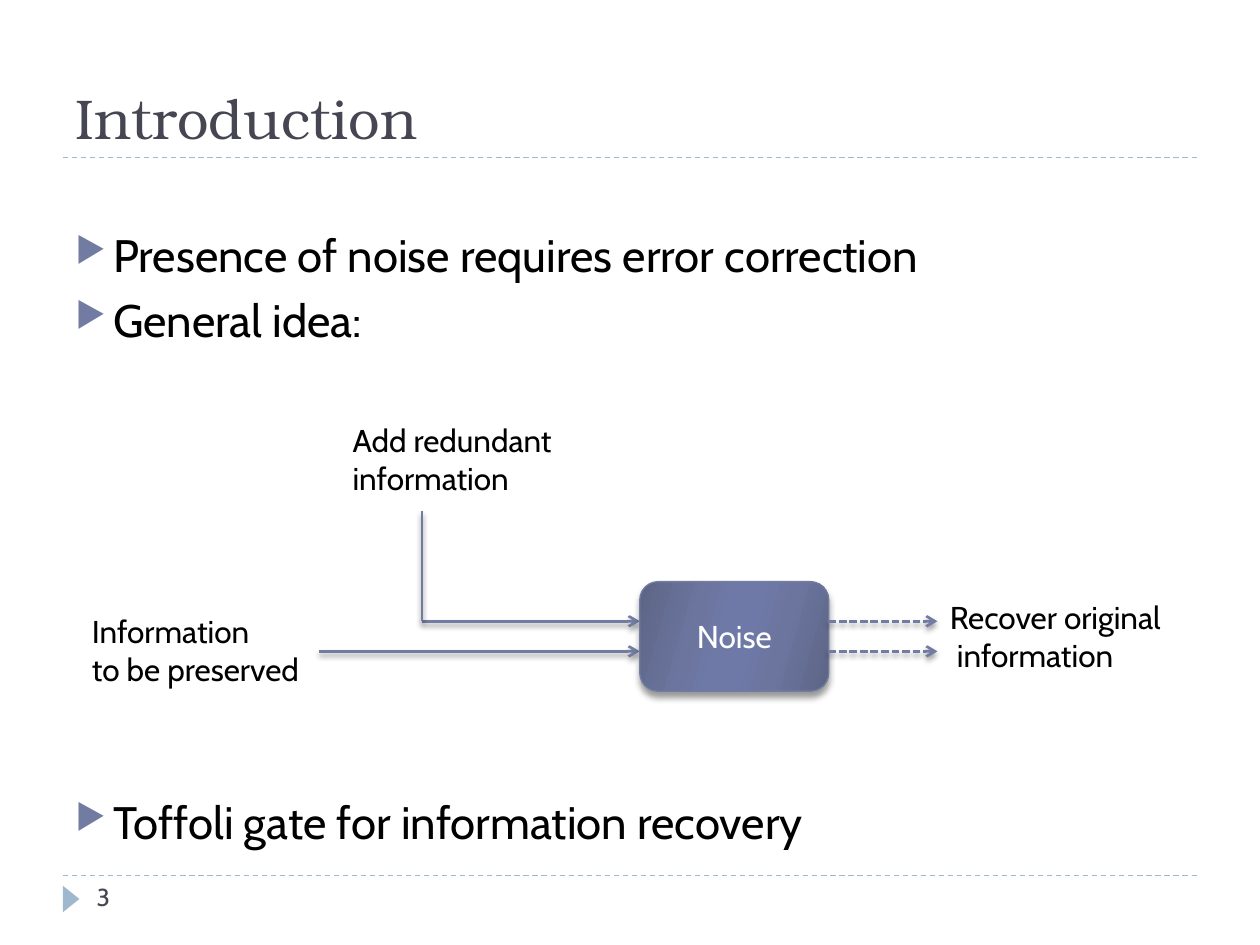
from lxml.etree import SubElement
from pptx import Presentation
from pptx.dml.color import RGBColor
from pptx.enum.dml import MSO_LINE_DASH_STYLE as Dash
from pptx.enum.shapes import MSO_CONNECTOR as Connector, MSO_SHAPE as Shape
from pptx.enum.text import MSO_ANCHOR as Anchor, PP_ALIGN as Align
from pptx.oxml.ns import qn
from pptx.util import Pt

BODY_FONT, TITLE_FONT = "Cabin", "TeX Gyre Bonum"
ACCENT, PALE, DARK, BLACK, WHITE = "727CA3", "9FB8CD", "464653", "000000", "FFFFFF"
NOISE_STOPS = [(0, "5D6585"), (30, "6B759E"), (45, "6E79A7"),
               (55, "6E79A7"), (73, "6B759E"), (100, "5D6585")]


def color(value):
    return RGBColor.from_string(value)


def add_run(paragraph, text, size, ink=BLACK, font=BODY_FONT):
    run = paragraph.add_run()
    run.text = text
    run.font.name = font
    run.font.size = Pt(size)
    run.font.color.rgb = color(ink)


def add_text(shapes, box, lines, size=18, ink=BLACK, wrap=True):
    frame = shapes.add_textbox(*map(Pt, box)).text_frame
    frame.word_wrap = wrap
    paragraph = frame.paragraphs[0]
    for index, line in enumerate(lines):
        if index:
            paragraph.add_line_break()
        add_run(paragraph, line, size, ink)


def set_effects(shape, blur=0, distance=0):
    effects = SubElement(shape.element.spPr, qn("a:effectLst"))
    if blur:
        shadow = SubElement(effects, qn("a:outerShdw"), blurRad=str(Pt(blur)),
                            dist=str(Pt(distance)), dir="5400000", rotWithShape="0")
        shade = SubElement(shadow, qn("a:srgbClr"), val=BLACK)
        SubElement(shade, qn("a:alpha"), val="40000")


def add_line(shapes, start, end, ink=ACCENT, width=1.5, dash=None, arrow=False, shadow=True):
    connector = shapes.add_connector(Connector.STRAIGHT, *map(Pt, start + end))
    connector.line.color.rgb = color(ink)
    connector.line.width = Pt(width)
    if dash:
        connector.line.dash_style = dash
    if arrow:
        SubElement(connector.element.spPr.find(qn("a:ln")), qn("a:tailEnd"), type="arrow")
    if shadow:
        set_effects(connector, 3, 2)
    else:
        set_effects(connector)


def add_title(slide, text):
    title = slide.shapes.title
    title.left, title.top, title.width, title.height = map(Pt, (36, 12.24, 648, 77.76))
    title.text_frame.vertical_anchor = Anchor.BOTTOM
    paragraph = title.text_frame.paragraphs[0]
    paragraph.alignment = Align.LEFT
    add_run(paragraph, text, 32, DARK, TITLE_FONT)


def add_bullets(slide, items):
    frame = slide.shapes.add_textbox(Pt(36), Pt(126), Pt(648), Pt(370.8)).text_frame
    frame.word_wrap = True
    for index, (text, space) in enumerate(items):
        paragraph = frame.add_paragraph() if index else frame.paragraphs[0]
        paragraph.space_before = Pt(space)
        properties = paragraph._p.get_or_add_pPr()
        properties.set("marL", str(Pt(21.6)))
        properties.set("indent", str(Pt(-21.6)))
        SubElement(SubElement(properties, qn("a:buClr")), qn("a:srgbClr"), val=ACCENT)
        SubElement(properties, qn("a:buSzPct"), val="76000")
        SubElement(properties, qn("a:buChar"), char="▶")
        add_run(paragraph, text, 26)


def add_noise_box(shapes, box):
    noise = shapes.add_shape(Shape.ROUNDED_RECTANGLE, *map(Pt, box))
    noise.fill.gradient()
    noise.fill.gradient_angle = 344
    stops = noise.element.spPr.find(".//" + qn("a:gsLst"))
    stops.clear()
    for position, shade in NOISE_STOPS:
        stop = SubElement(stops, qn("a:gs"), pos=str(position * 1000))
        SubElement(stop, qn("a:srgbClr"), val=shade)
    noise.line.color.rgb = color(ACCENT)
    noise.line.width = Pt(0.75)
    set_effects(noise, 4, 3.4)
    noise.text_frame.vertical_anchor = Anchor.MIDDLE
    paragraph = noise.text_frame.paragraphs[0]
    paragraph.alignment = Align.CENTER
    add_run(paragraph, "Noise", 18, WHITE)


def add_diagram(slide):
    shapes = slide.shapes.add_group_shape().shapes
    box_left, box_right, output_right = 365.6, 473.4, 535.7
    upper, lower, corner = 355, 372.2, 241.2
    add_text(shapes, (194.4, 236.9, 170.6, 72.7), ["Add redundant information"])
    add_text(shapes, (45.4, 346.3, 135.4, 51.1),
             ["Information", "to be preserved"], wrap=False)
    add_line(shapes, (182.2, lower), (box_left, lower), arrow=True)
    add_line(shapes, (corner, upper), (box_left, upper), arrow=True)
    add_line(shapes, (corner, upper), (corner, 292.3))
    add_noise_box(shapes, (box_left, 332.4, 108, 62.6))
    for y in (lower, upper):
        add_line(shapes, (box_right, y), (output_right, y), dash=Dash.SQUARE_DOT, arrow=True)
    add_text(shapes, (output_right, 338.2, 136.1, 51.1), ["Recover original  information"])


def add_frame(slide):
    for y in (500.4, 90):
        add_line(slide.shapes, (36, y), (684, y), PALE, 0.75, Dash.DASH, shadow=False)
    marker = slide.shapes.add_shape(Shape.ISOSCELES_TRIANGLE,
                                    Pt(33.1), Pt(509), Pt(15.1), Pt(9.4))
    marker.rotation = 90
    marker.fill.solid()
    marker.fill.fore_color.rgb = color(PALE)
    marker.line.fill.background()
    marker.shadow.inherit = False


def main():
    presentation = Presentation()
    presentation.slide_width, presentation.slide_height = Pt(720), Pt(540)
    slide = presentation.slides.add_slide(presentation.slide_layouts[5])
    add_frame(slide)
    add_title(slide, "Introduction")
    add_bullets(slide, [("Presence of noise requires error correction", 6),
                        ("General idea:", 6),
                        ("Toffoli gate for information recovery", 256)])
    add_diagram(slide)
    add_text(slide.shapes, (48.2, 500.4, 156.2, 28.8), ["3"], 14, DARK)
    presentation.save("out.pptx")


if __name__ == "__main__":
    main()
